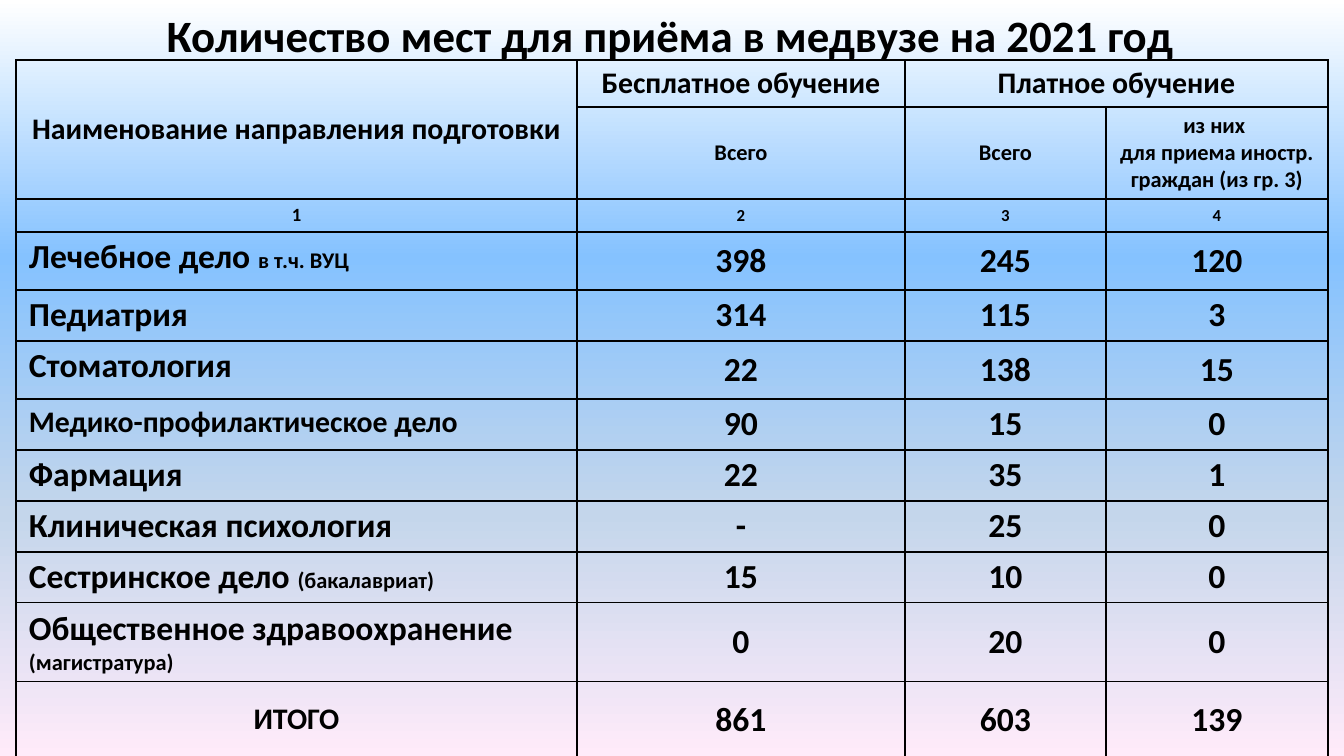
"""Build the slide with the table of admission places for 2021."""
from pptx import Presentation, util as u
from pptx.dml.color import RGBColor
from pptx.enum import text
from pptx.oxml import parse_xml
from pptx.oxml.ns import nsdecls, qn

PX = 914400 / 134.4
COLORS = {"text": "000000", "line": "000000", "white": "FFFFFF",
          "blue": "85C2FF", "pale": "C4D6EB", "pink": "FFEBFA"}
BACKGROUND = [(0, "white"), (34, "blue"), (68, "pale"), (100, "pink")]
COLS = [561, 328, 201, 222]
ROWS = [47, 92, 33, 58, 51, 58, 51, 51, 51, 51, 79, 76]
PROGRAMMES = [
    ([("Лечебное дело ", 18), ("в т.ч. ВУЦ", 12)], "398", "245", "120"),
    ([("Педиатрия", 18)], "314", "115", "3"),
    ([("Стоматология", 18)], "22", "138", "15"),
    ([("Медико-профилактическое дело", 16)], "90", "15", "0"),
    ([("Фармация", 18)], "22", "35", "1"),
    ([("Клиническая психология", 18)], "-", "25", "0"),
    ([("Сестринское дело ", 18), ("(бакалавриат)", 12)], "15", "10", "0"),
    ([("Общественное здравоохранение ", 18), ("(магистратура)", 12)], "0", "20", "0"),
]
TOTALS = ["861", "603", "139"]


def px(n):
    return u.Emu(round(n * PX))


def write(tf, *paragraphs, size=18, align="CENTER"):
    """Fill a text frame; a paragraph is a string or a list of (text, size) runs."""
    tf.word_wrap = True
    for i, runs in enumerate(paragraphs):
        p = tf.add_paragraph() if i else tf.paragraphs[0]
        p.alignment = getattr(text.PP_ALIGN, align)
        for words, points in [(runs, size)] if isinstance(runs, str) else runs:
            r = p.add_run()
            r.text = words
            r.font.name, r.font.size, r.font.bold = "Calibri", u.Pt(points), True
            r.font.color.rgb = RGBColor.from_string(COLORS["text"])


def paint_background(s):
    """Fill the background with a vertical gradient."""
    fill = s.background.fill
    fill.gradient()
    fill.gradient_angle = 270
    stops = next(s.element.iter(qn("a:gsLst")))
    for stop in list(stops):
        stops.remove(stop)
    for percent, color in BACKGROUND:
        stops.append(parse_xml(f'<a:gs {nsdecls("a")} pos="{percent * 1000}">'
                               f'<a:srgbClr val="{COLORS[color]}"/></a:gs>'))


def add_title(s, words):
    """Add the centred heading."""
    tf = s.shapes.add_textbox(px(65), px(0), px(1210), px(69)).text_frame
    tf.vertical_anchor = text.MSO_ANCHOR.MIDDLE
    write(tf, words, size=24)


def style_cell(cell):
    """Give a cell thin borders, margins and no fill."""
    cell.margin_left = cell.margin_right = px(13)
    cell.margin_top = cell.margin_bottom = px(5)
    cell.vertical_anchor = text.MSO_ANCHOR.MIDDLE
    for side in "LRTB":
        cell._tc.get_or_add_tcPr().append(parse_xml(
            f'<a:ln{side} {nsdecls("a")} w="12700"><a:solidFill>'
            f'<a:srgbClr val="{COLORS["line"]}"/></a:solidFill></a:ln{side}>'))
    cell.fill.background()


def add_grid(s):
    """Add the empty bordered table."""
    table = s.shapes.add_table(len(ROWS), len(COLS), px(16), px(60),
                               px(sum(COLS)), px(sum(ROWS))).table
    table.first_row = table.horz_banding = False
    for column, width in zip(table.columns, COLS):
        column.width = px(width)
    for row, height in zip(table.rows, ROWS):
        row.height = px(height)
    for cell in table.iter_cells():
        style_cell(cell)
    return table


def fill_header(table):
    """Write the two heading rows and the column numbers."""
    table.cell(0, 0).merge(table.cell(1, 0))
    table.cell(0, 2).merge(table.cell(0, 3))
    headings = ["Наименование направления подготовки", "Бесплатное обучение", "Платное обучение"]
    for col, words in enumerate(headings):
        write(table.cell(0, col).text_frame, words, size=16)
    for col in (1, 2):
        write(table.cell(1, col).text_frame, "Всего", size=12)
    write(table.cell(1, 3).text_frame, "из них ",
          "для приема иностр. граждан (из гр. 3)", size=12)
    for col in range(4):
        write(table.cell(2, col).text_frame, str(col + 1), size=9 if col else 10)


def fill_body(table):
    """Write the programmes and the totals."""
    for row, (name, *places) in enumerate(PROGRAMMES, 3):
        cell = table.cell(row, 0)
        write(cell.text_frame, name, align="LEFT")
        if row < len(ROWS) - 2:
            cell.vertical_anchor = text.MSO_ANCHOR.TOP
        for col, number in enumerate(places, 1):
            write(table.cell(row, col).text_frame, number)
    last = len(ROWS) - 1
    write(table.cell(last, 0).text_frame, "ИТОГО", size=16)
    for col, number in enumerate(TOTALS, 1):
        write(table.cell(last, col).text_frame, number)


def main():
    prs = Presentation()
    prs.slide_width, prs.slide_height = px(1344), px(756)
    s = prs.slides.add_slide(prs.slide_layouts[6])
    paint_background(s)
    add_title(s, "Количество мест для приёма в медвузе на 2021 год")
    table = add_grid(s)
    fill_header(table)
    fill_body(table)
    prs.save("out.pptx")


if __name__ == "__main__":
    main()
